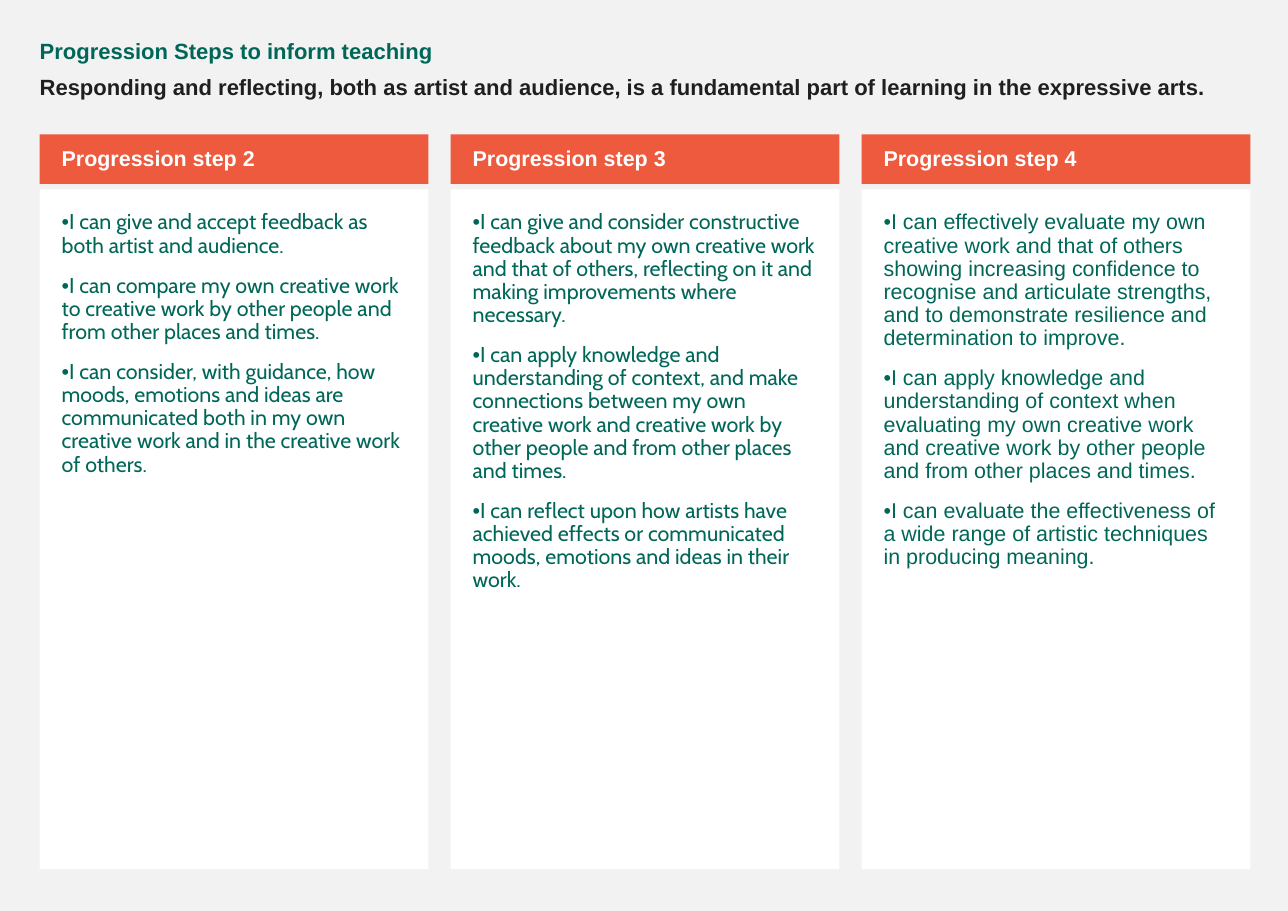
"""Build a slide of three progression steps for the expressive arts."""
import pptx
import pptx.dml.color
import pptx.enum.shapes
import pptx.enum.text
import pptx.util

Inches = pptx.util.Inches
GREEN, ORANGE, WHITE, INK, GREY = "006758", "ED5A3E", "FFFFFF", "1F1F1F", "F2F2F2"
ANCHOR = pptx.enum.text.MSO_ANCHOR


def paint(target, colour):
    if hasattr(target, "solid"):
        target.solid()
        target = target.fore_color
    else:
        target = target.color
    target.rgb = pptx.dml.color.RGBColor.from_string(colour)


def write(shape, paragraphs, margins, anchor, line_spacing=0.9):
    frame = shape.text_frame
    frame.word_wrap = True
    frame.auto_size = pptx.enum.text.MSO_AUTO_SIZE.NONE
    frame.vertical_anchor = anchor
    frame.margin_left, frame.margin_top, frame.margin_right, frame.margin_bottom = map(Inches, margins)
    for number, spans in enumerate(paragraphs):
        para = frame.add_paragraph() if number else frame.paragraphs[0]
        para.alignment = pptx.enum.text.PP_ALIGN.LEFT
        para.line_spacing = line_spacing
        para.space_before = pptx.util.Pt(11)
        for text, font, size, colour, bold in spans:
            span = para.add_run()
            span.text = text
            span.font.name = font
            span.font.size = pptx.util.Pt(size)
            span.font.bold = bold
            paint(span.font, colour)


steps = [
    ("Progression step 2", "Cabin", [
        "I can give and accept feedback as both artist and audience.",
        "I can compare my own creative work to creative work by other people and from other places and times.",
        "I can consider, with guidance, how moods, emotions and ideas are communicated both in my "
        "own creative work and in the creative work of others.",
    ]),
    ("Progression step 3", "Cabin", [
        "I can give and consider constructive feedback about my own creative work and that of others, "
        "reflecting on it and making improvements where necessary.",
        "I can apply knowledge and understanding of context, and make connections between my own "
        "creative work and creative work by other people and from other places and times.",
        "I can reflect upon how artists have achieved effects or communicated moods, emotions and "
        "ideas in their work.",
    ]),
    ("Progression step 4", "Arial", [
        "I can effectively evaluate my own creative work and that of others showing increasing "
        "confidence to recognise and articulate strengths, and to demonstrate resilience and "
        "determination to improve.",
        "I can apply knowledge and understanding of context when evaluating my own creative work "
        "and creative work by other people and from other places and times.",
        "I can evaluate the effectiveness of a wide range of artistic techniques in producing meaning.",
    ]),
]

deck = pptx.Presentation()
deck.slide_width, deck.slide_height = Inches(11.69), Inches(8.27)
page = deck.slides.add_slide(deck.slide_layouts[5])
paint(page.background.fill, GREY)

title = page.shapes.title
title.left, title.top, title.width, title.height = map(Inches, (0.26, 0.36, 11.08, 0.65))
write(title, [
    [("Progression Steps to inform teaching", "Arial", 14.4, GREEN, True)],
    [("Responding and reflecting, both as artist and audience, is a fundamental part of learning "
      "in the expressive arts.", "Arial", 14.4, INK, True)],
], (0.1, 0.05, 0.1, 0.05), ANCHOR.TOP, 0.7)

for column, (heading, font, statements) in enumerate(steps):
    body = [[("•", "Arial", 14, GREEN, False), (statement, font, 14, GREEN, False)]
            for statement in statements]
    header = [[(heading, "Arial", 14, WHITE, True)]]
    for top, height, colour, paragraphs, margins, anchor in (
        (1.72, 6.17, WHITE, body, (0.2, 0.2, 0.2, 0.2), ANCHOR.TOP),
        (1.22, 0.45, ORANGE, header, (0.2, 0.05, 0.1, 0.05), ANCHOR.MIDDLE),
    ):
        box = page.shapes.add_shape(
            pptx.enum.shapes.MSO_SHAPE.RECTANGLE,
            Inches(0.36 + 3.73 * column), Inches(top), Inches(3.53), Inches(height))
        box.shadow.inherit = False
        paint(box.fill, colour)
        box.line.fill.background()
        write(box, paragraphs, margins, anchor)

deck.save("out.pptx")
